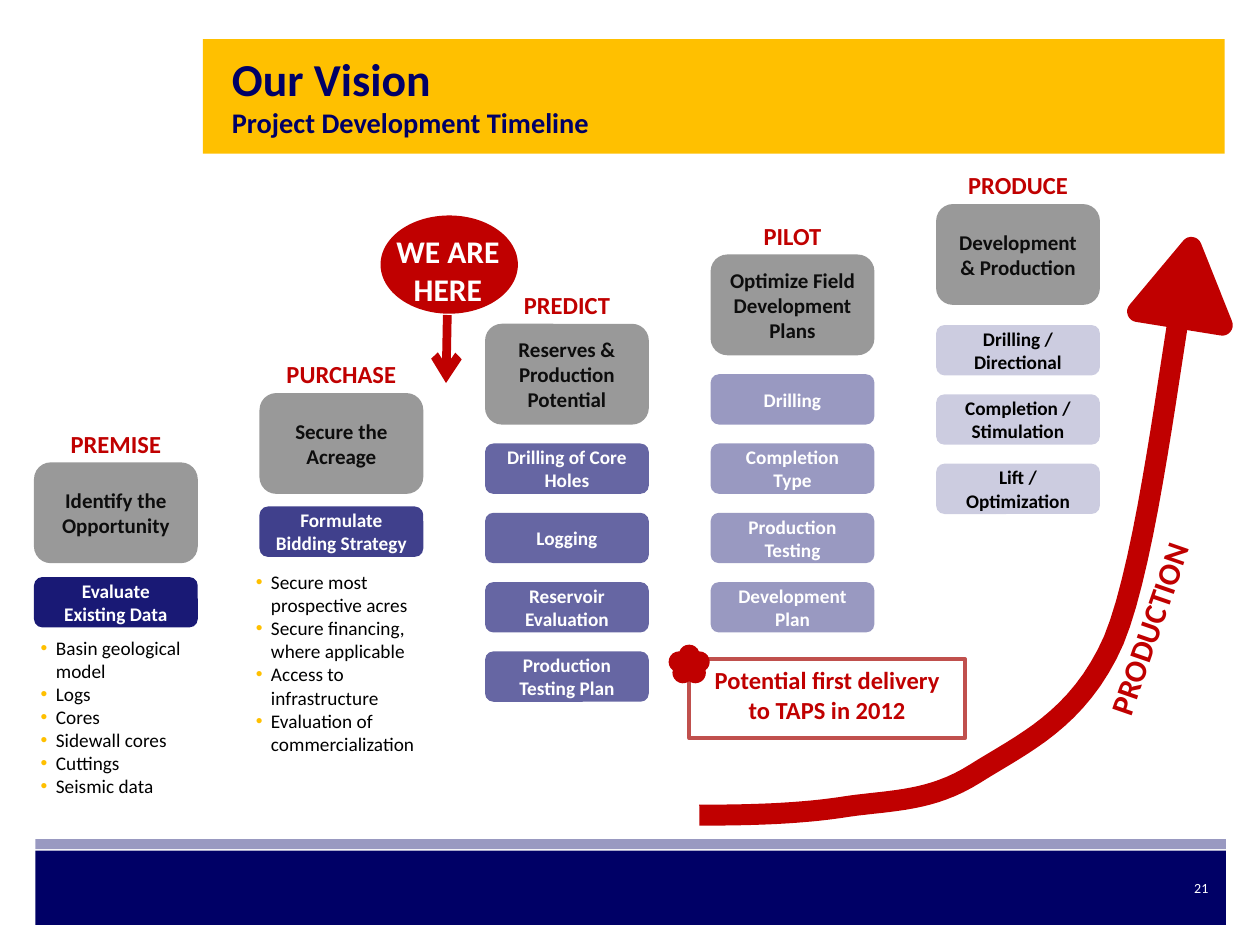
from dataclasses import dataclass

from lxml.etree import SubElement
from pptx import Presentation
from pptx.dml.color import RGBColor
from pptx.enum.shapes import MSO_CONNECTOR as Connector, MSO_SHAPE as Shape
from pptx.enum.text import MSO_ANCHOR as Anchor, MSO_AUTO_SIZE as AutoSize, PP_ALIGN as Align
from pptx.oxml.ns import qn
from pptx.util import Inches, Pt


@dataclass(frozen=True)
class Theme:
    font: str = "Calibri"
    bullet_font: str = "Arial"
    navy: str = "000066"
    gold: str = "FFC000"
    red: str = "C00000"
    frame: str = "C0504D"
    grey: str = "808080"
    ink: str = "0D0D0D"
    black: str = "000000"
    white: str = "FFFFFF"
    title: float = 26.1
    subtitle: float = 16.2
    callout: int = 18
    label: int = 14
    stage: int = 12
    step: int = 11
    number: int = 8


THEME = Theme()
STAGE_LEFT, STAGE_PITCH, STAGE_WIDTH = 0.27, 1.79, 1.3
STAGE_HEIGHT, STEP_HEIGHT, STEP_PITCH = 0.8, 0.4, 0.55

# name, stage top, goal, first step top, step opacity, step text colour, steps
STAGES = [
    ("PREMISE", 3.67, "Identify the Opportunity", 4.58, 90, THEME.white,
     ["Evaluate\nExisting Data"]),
    ("PURCHASE", 3.12, "Secure the Acreage", 4.02, 75, THEME.white,
     ["Formulate Bidding Strategy"]),
    ("PREDICT", 2.57, "Reserves & Production Potential", 3.52, 60, THEME.white,
     ["Drilling of Core Holes", "Logging", "Reservoir Evaluation", "Production Testing Plan"]),
    ("PILOT", 2.02, "Optimize Field Development Plans", 2.97, 40, THEME.white,
     ["Drilling", "Completion Type", "Production Testing", "Development Plan"]),
    ("PRODUCE", 1.62, "Development & Production", 2.58, 20, THEME.black,
     ["Drilling / Directional", "Completion / Stimulation", "Lift / Optimization"]),
]

# bounds and items of the two bullet lists
DETAILS = [
    ((0.16, 5.02, 1.5, 1.34),
     ["Basin geological model", "Logs", "Cores", "Sidewall cores", "Cuttings", "Seismic data"]),
    ((1.86, 4.51, 1.7, 1.5),
     ["Secure most prospective acres", "Secure financing, where applicable",
      "Access to infrastructure", "Evaluation of commercialization"]),
]

# start point, then two control points and an end point per segment
CURVE_START = (5.55, 6.47)
CURVE = [
    ((5.95, 6.47), (6.36, 6.46), (6.73, 6.4)),
    ((7.09, 6.35), (7.39, 6.36), (7.74, 6.14)),
    ((8.1, 5.91), (8.56, 5.72), (8.84, 5.08)),
    ((9.11, 4.43), (9.3, 2.74), (9.4, 2.26)),
]


def apply(target, values):
    for name, value in values.items():
        setattr(target, name, value)


def add_span(para, text, size, color, bold=True):
    span = para.add_run()
    span.text = text
    apply(span.font, {"name": THEME.font, "size": Pt(size), "bold": bold})
    span.font.color.rgb = RGBColor.from_string(color)


def write(box, text, size, color, bold=True, align=Align.CENTER, anchor=Anchor.MIDDLE):
    frame = box.text_frame
    apply(frame, {"word_wrap": True, "vertical_anchor": anchor})
    for index, line in enumerate(text.split("\n")):
        para = frame.add_paragraph() if index else frame.paragraphs[0]
        para.alignment = align
        add_span(para, line, size, color, bold)


def set_line(shape, line, width):
    if line:
        shape.line.color.rgb = RGBColor.from_string(line)
        shape.line.width = Pt(width)
    else:
        shape.line.fill.background()


def add_box(slide, kind, bounds, fill=None, opacity=100, line=None, width=1, rotation=0):
    box = slide.shapes.add_shape(kind, *map(Inches, bounds))
    box.rotation = rotation
    box.shadow.inherit = False
    if fill:
        box.fill.solid()
        box.fill.fore_color.rgb = RGBColor.from_string(fill)
        if opacity < 100:
            color = next(box.fill._xPr.iter(qn("a:srgbClr")))
            SubElement(color, qn("a:alpha"), val=str(opacity * 1000))
    else:
        box.fill.background()
    set_line(box, line, width)
    return box


def add_text(slide, bounds, text, size, color, rotation=0, **layout):
    box = slide.shapes.add_textbox(*map(Inches, bounds))
    box.rotation = rotation
    write(box, text, size, color, **layout)


def add_bullets(slide, bounds, items):
    box = add_box(slide, Shape.ROUNDED_RECTANGLE, bounds)
    write(box, "\n".join(items), THEME.step, THEME.black, bold=False, align=Align.LEFT)
    indent = Inches(0.12)
    for para in box.text_frame.paragraphs:
        props = para._p.get_or_add_pPr()
        props.set("marL", str(indent))
        props.set("indent", str(-indent))
        SubElement(SubElement(props, qn("a:buClr")), qn("a:srgbClr"), val=THEME.gold)
        SubElement(props, qn("a:buFont"), typeface=THEME.bullet_font)
        SubElement(props, qn("a:buChar"), char="•")


def add_arrow(slide, start, end, color, width):
    arrow = slide.shapes.add_connector(Connector.STRAIGHT, *map(Inches, start + end))
    set_line(arrow, color, width)
    SubElement(arrow.line._get_or_add_ln(), qn("a:tailEnd"), type="arrow")
    SubElement(arrow._element.spPr, qn("a:effectLst"))


def bezier(points, t):
    weights = ((1 - t) ** 3, 3 * t * (1 - t) ** 2, 3 * t * t * (1 - t), t ** 3)
    return tuple(sum(w * point[axis] for w, point in zip(weights, points)) for axis in (0, 1))


def add_curve(slide, start, segments, color, width, samples=16):
    points = [start]
    for segment in segments:
        controls = (points[-1], *segment)
        points += [bezier(controls, step / samples) for step in range(1, samples + 1)]
    # The builder rounds to whole units, so points go in as lengths, not inches
    points = [tuple(map(Inches, point)) for point in points]
    builder = slide.shapes.build_freeform(*points[0])
    builder.add_line_segments(points[1:], close=False)
    curve = builder.convert_to_shape()
    curve.shadow.inherit = False
    curve.fill.background()
    set_line(curve, color, width)


def add_title(slide):
    title = slide.shapes.title
    bounds = zip(("left", "top", "width", "height"), map(Inches, (1.74, 0.46, 7.73, 0.59)))
    apply(title, dict(bounds))
    apply(title.text_frame, {"auto_size": AutoSize.NONE, "vertical_anchor": Anchor.MIDDLE})
    para = title.text_frame.paragraphs[0]
    para.alignment = Align.LEFT
    add_span(para, "Our Vision", THEME.title, THEME.navy)
    para.add_line_break()
    add_span(para, "Project Development Timeline", THEME.subtitle, THEME.navy)
    slide.shapes._spTree.append(title._element)  # in front of the banner


def add_stage(slide, index, name, top, goal, step_top, opacity, color, steps):
    left = STAGE_LEFT + index * STAGE_PITCH
    label = add_box(slide, Shape.ROUNDED_RECTANGLE, (left, top - 0.35, STAGE_WIDTH, STEP_HEIGHT))
    write(label, name, THEME.label, THEME.red)
    box = add_box(slide, Shape.ROUNDED_RECTANGLE, (left, top, STAGE_WIDTH, STAGE_HEIGHT),
                  THEME.grey, 80)
    write(box, goal, THEME.stage, THEME.ink)
    for row, text in enumerate(steps):
        bounds = (left, step_top + row * STEP_PITCH, STAGE_WIDTH, STEP_HEIGHT)
        step = add_box(slide, Shape.ROUNDED_RECTANGLE, bounds, THEME.navy, opacity)
        write(step, text, THEME.step, color)


def main():
    deck = Presentation()
    apply(deck, {"slide_width": Inches(10), "slide_height": Inches(7.5)})
    slide = deck.slides.add_slide(deck.slide_layouts[5])

    # Banner, footer and title
    add_box(slide, Shape.RECTANGLE, (0.28, 6.66, 9.45, 0.08), THEME.navy, 40)
    add_box(slide, Shape.RECTANGLE, (0.28, 6.75, 9.45, 0.59), THEME.navy)
    add_box(slide, Shape.RECTANGLE, (1.61, 0.31, 8.11, 0.91), THEME.gold)
    add_text(slide, (7.36, 6.85, 2.33, 0.4), "21", THEME.number, THEME.white,
             bold=False, align=Align.RIGHT)
    add_title(slide)

    # Stages with their steps and details
    for index, stage in enumerate(STAGES):
        add_stage(slide, index, *stage)
    for bounds, items in DETAILS:
        add_bullets(slide, bounds, items)

    # Current position
    add_box(slide, Shape.OVAL, (3.02, 1.71, 1.09, 0.78), THEME.red)
    add_text(slide, (2.89, 1.79, 1.33, 0.71), "WE ARE HERE", THEME.callout, THEME.white,
             anchor=Anchor.TOP)
    add_arrow(slide, (3.55, 2.5), (3.54, 3.04), THEME.red, 5)

    # Production curve
    add_text(slide, (8.2, 4.79, 1.83, 0.4), "PRODUCTION", THEME.callout, THEME.red,
             rotation=289.1, anchor=Anchor.TOP)
    add_curve(slide, CURVE_START, CURVE, THEME.red, 12)
    add_box(slide, Shape.ISOSCELES_TRIANGLE, (9.07, 1.96, 0.68, 0.57), THEME.red,
            line=THEME.red, width=12, rotation=9.1)

    # First delivery
    note = add_box(slide, Shape.RECTANGLE, (5.47, 5.23, 2.19, 0.63), THEME.white,
                   line=THEME.frame, width=2)
    write(note, "Potential first delivery to TAPS in 2012", THEME.label, THEME.red,
          anchor=Anchor.TOP)
    add_box(slide, Shape.STAR_5_POINT, (5.39, 5.2, 0.16, 0.14), THEME.red,
            line=THEME.red, width=12)

    deck.save("out.pptx")


if __name__ == "__main__":
    main()
